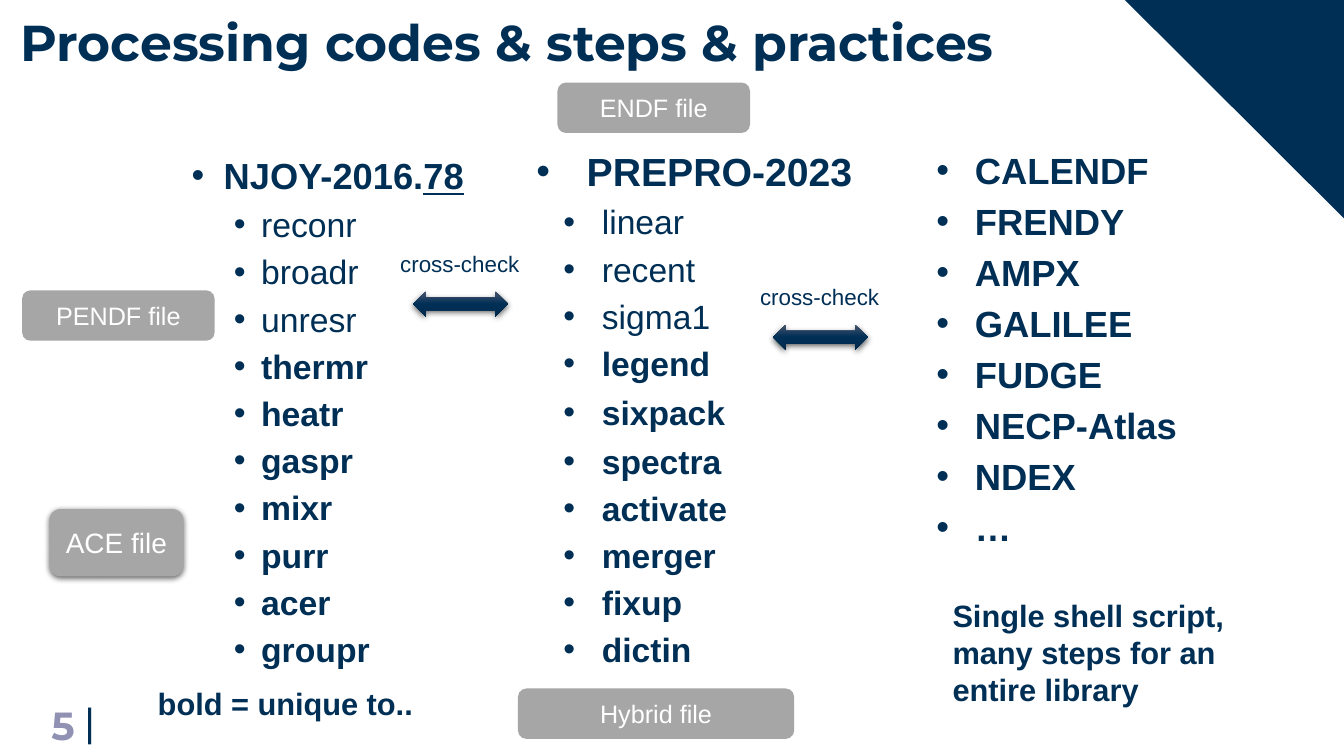
from copy import deepcopy

from lxml import etree
from pptx import Presentation
from pptx import util as u
from pptx.dml.color import RGBColor
from pptx.enum import shapes, text
from pptx.oxml.ns import qn

NAVY = RGBColor(0x00, 0x2F, 0x56)
NAVY_LIGHT = RGBColor(0x4B, 0x55, 0x6D)
NAVY_DARK = RGBColor(0x00, 0x2A, 0x4C)
LILAC = RGBColor(0x90, 0x91, 0xB3)
GREY = RGBColor(0xA6, 0xA6, 0xA6)
WHITE = RGBColor(0xFF, 0xFF, 0xFF)
TOP, MIDDLE = text.MSO_ANCHOR.TOP, text.MSO_ANCHOR.MIDDLE
LEFT, CENTER, RIGHT = text.PP_ALIGN.LEFT, text.PP_ALIGN.CENTER, text.PP_ALIGN.RIGHT

NJOY = ["reconr", "broadr", "unresr", "thermr", "heatr", "gaspr", "mixr",
        "purr", "acer", "groupr"]
PREPRO = ["linear", "recent", "sigma1", "legend", "sixpack", "spectra",
          "activate", "merger", "fixup", "dictin"]
OTHER_CODES = ["CALENDF", "FRENDY", "AMPX", "GALILEE", "FUDGE", "NECP-Atlas",
               "NDEX", "…"]
SHARED_MODULES = 3  # leading modules that are not unique to one code


def place(part, box):
    part.left, part.top, part.width, part.height = (u.Pt(v) for v in box)


def format_run(run, size, color=NAVY, bold=False, face="Arial"):
    run.font.name, run.font.size, run.font.bold = face, u.Pt(size), bold
    run.font.color.rgb = color


def write(part, words, size, color=NAVY, bold=False, face="Arial",
          align=LEFT, anchor=TOP, wrap=True):
    frame = part.text_frame
    frame.text = words
    frame.word_wrap, frame.vertical_anchor = wrap, anchor
    frame.auto_size = text.MSO_AUTO_SIZE.NONE
    frame.paragraphs[0].alignment = align
    format_run(frame.paragraphs[0].runs[0], size, color, bold, face)


def add_label(slide, box, words, size, inset=(6.5, 3), **style):
    label = slide.shapes.add_textbox(*(u.Pt(v) for v in box))
    frame = label.text_frame
    frame.margin_left = frame.margin_right = u.Pt(inset[0])
    frame.margin_top = frame.margin_bottom = u.Pt(inset[1])
    write(label, words, size, **style)


def add_shadow(part):
    effects = part._element.spPr.find(qn("a:effectLst"))
    shadow = etree.SubElement(effects, qn("a:outerShdw"), blurRad=str(u.Pt(4.5)),
                              dist=str(u.Pt(1.5)), dir="5400000", rotWithShape="0")
    color = etree.SubElement(shadow, qn("a:srgbClr"), val="000000")
    etree.SubElement(color, qn("a:alpha"), val="63000")


def add_plain_shape(slide, kind, box):
    part = slide.shapes.add_shape(kind, *(u.Pt(v) for v in box))
    part.shadow.inherit = False
    part.line.fill.background()
    return part


def add_file_tag(slide, box, words, size=18, shadowed=False):
    tag = add_plain_shape(slide, shapes.MSO_SHAPE.FLOWCHART_ALTERNATE_PROCESS, box)
    tag.fill.solid()
    tag.fill.fore_color.rgb = GREY
    write(tag, words, size, WHITE, align=CENTER, anchor=MIDDLE)
    if shadowed:
        add_shadow(tag)


def add_cross_check(slide, box, label_offset):
    """Double arrow filling the box, with its label above it."""
    left, top, _, _ = box
    arrow = add_plain_shape(slide, shapes.MSO_SHAPE.LEFT_RIGHT_ARROW, box)
    arrow.fill.gradient()
    arrow.fill.gradient_angle = 270
    stop_list = arrow._element.spPr.find(".//" + qn("a:gsLst"))
    stop_list.append(deepcopy(stop_list[-1]))
    shades = [NAVY_LIGHT, NAVY, NAVY_DARK]
    for i, (stop, shade) in enumerate(zip(arrow.fill.gradient_stops, shades)):
        stop.position = i / 2
        stop.color.rgb = shade
    add_shadow(arrow)
    add_label(slide, (left - label_offset, top - 32.4, 98.6, 26),
              "cross-check", 16, wrap=False)


def fill_list(body, box, entries, inset=7.2):
    """Each entry is (words, level, margin, hanging, size, bold)."""
    place(body, box)
    frame = body.text_frame
    frame.auto_size, frame.vertical_anchor = text.MSO_AUTO_SIZE.NONE, TOP
    frame.margin_left = frame.margin_right = u.Pt(inset)
    frame.margin_top = u.Pt(6)
    for i, (words, level, margin, hanging, size, bold) in enumerate(entries):
        item = frame.add_paragraph() if i else frame.paragraphs[0]
        item.text, item.level = words, level
        if i == 0:
            item.space_before = u.Pt(0)
        props = item._p.get_or_add_pPr()
        props.set("marL", str(u.Pt(margin)))
        props.set("indent", str(u.Pt(-hanging)))
        etree.SubElement(props, qn("a:buFont"), typeface="Arial")
        etree.SubElement(props, qn("a:buChar"), char="•")
        format_run(item.runs[0], size, bold=bold)
    return frame.paragraphs


def modules(names, *layout):
    return [(name, *layout, i >= SHARED_MODULES) for i, name in enumerate(names)]


def add_njoy(body, box):
    heading = ("NJOY-2016.", 0, 23, 23, 25.9, True)
    items = fill_list(body, box, [heading] + modules(NJOY, 1, 49.7, 19.4, 24.1), 6.5)
    version = items[0].add_run()
    version.text = "78"
    format_run(version, 25.9, bold=True)
    version.font.underline = True


def add_prepro(body, box):
    heading = ("PREPRO-2023", 0, 42.5, 36, 28, True)
    items = fill_list(body, box, [heading] + modules(PREPRO, 2, 53.3, 27.4, 24))
    for name in ("sixpack", "spectra"):
        items[1 + PREPRO.index(name)].space_before = u.Pt(6.2)


def add_other_codes(body, box):
    fill_list(body, box, [(code, 0, 27.4, 27.4, 26, True) for code in OTHER_CODES])


def add_corner(slide, box):
    left, top, width, height = box
    outline = slide.shapes.build_freeform(u.Pt(left), u.Pt(top))
    outline.add_line_segments([(u.Pt(left + width), u.Pt(top)),
                               (u.Pt(left + width), u.Pt(top + height))])
    corner = outline.convert_to_shape()
    corner.shadow.inherit = False
    corner.fill.solid()
    corner.fill.fore_color.rgb = NAVY
    corner.line.fill.background()


def add_page_number(slide, box):
    left, top, width, height = box
    add_label(slide, (left + width, top - 3, 10, height), "|", 28, inset=(0, 0),
              anchor=MIDDLE, wrap=False)
    add_label(slide, box, "5", 28, inset=(7.2, 3.6), color=LILAC, bold=True,
              face="Montserrat", align=RIGHT, anchor=MIDDLE)


def build_codes_slide(deck):
    slide = deck.slides.add_slide(deck.slide_layouts.get_by_name("Comparison"))
    title, njoy, prepro, others, spare = slide.placeholders
    spare._element.getparent().remove(spare._element)

    # Page furniture and title
    add_corner(slide, (803.5, 0, 156.5, 156))
    add_page_number(slide, (8, 503.3, 52.5, 28.8))
    place(title, (7.2, 4.3, 877.7, 60.5))
    write(title, "Processing codes & steps & practices", 36, bold=True,
          face="Montserrat")

    # Three columns of codes
    add_njoy(njoy, (130.3, 103.7, 219.6, 356.4))
    add_prepro(prepro, (369.4, 99.4, 265, 382.3))
    add_other_codes(others, (661.7, 100, 246.2, 311.8))

    # Comparisons between the columns
    add_cross_check(slide, (295.2, 208.1, 67.7, 18), 15.8)
    add_cross_check(slide, (552.2, 231.8, 67.7, 18), 15.8)

    # File types
    add_file_tag(slide, (398.2, 59, 137.5, 36), "ENDF file")
    add_file_tag(slide, (15.8, 207.4, 137.5, 36), "PENDF file")
    add_file_tag(slide, (370, 491.8, 197.3, 36), "Hybrid file")
    add_file_tag(slide, (35.3, 363.6, 95.8, 48.2), "ACE file", 20, shadowed=True)

    # Remarks
    add_label(slide, (673.9, 423.4, 211, 86.4),
              "Single shell script, many steps for an entire library", 22, bold=True)
    add_label(slide, (106.2, 486, 205, 33), "bold = unique to..", 22, bold=True)


def main():
    deck = Presentation()
    deck.slide_width, deck.slide_height = u.Pt(960), u.Pt(540)
    build_codes_slide(deck)
    deck.save("out.pptx")


if __name__ == "__main__":
    main()
